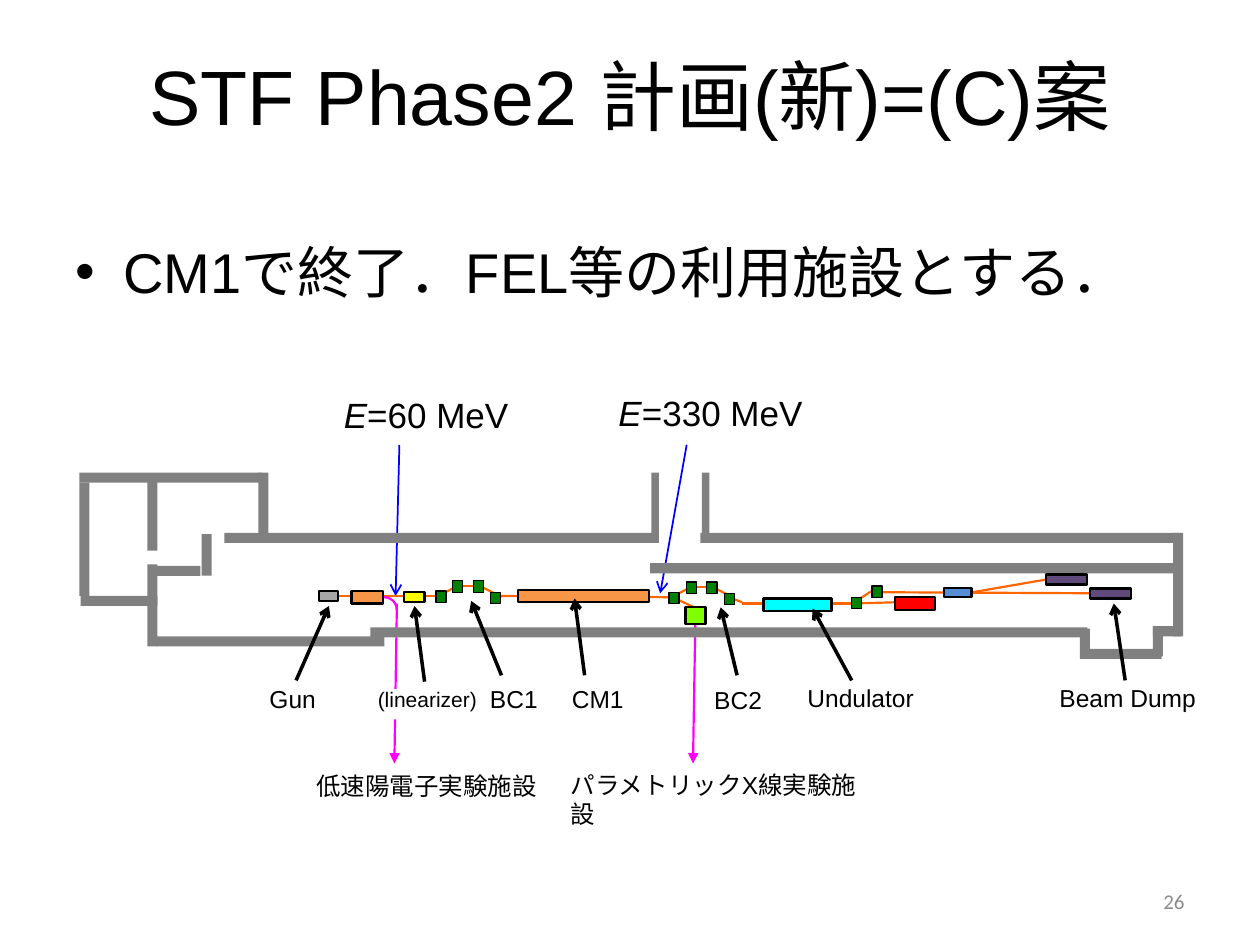
from lxml import etree
from pptx import Presentation
from pptx.dml.color import RGBColor
from pptx.enum.shapes import MSO_CONNECTOR, MSO_SHAPE
from pptx.enum.text import MSO_ANCHOR, PP_ALIGN
from pptx.oxml.ns import qn
from pptx.util import Inches, Pt

HUES = {
    "black": "000000", "white": "FFFFFF", "note": "8C8C8C", "wall": "808080",
    "beam": "FF6600", "branch": "FF00FF", "mark": "0000FF", "magnet": "008000",
    "cavity": "F79646", "gun": "A6A6A6", "dump": "604A7B", "bend": "558ED5",
    "wave": "00FFFF", "linear": "FFFF00", "stop": "FF0000", "target": "80FF00",
}


def hue(name):
    return RGBColor.from_string(HUES[name])


def text(slide, box, words, size=14, font="Arial", color="black", lead="",
         align=PP_ALIGN.LEFT, anchor=MSO_ANCHOR.TOP, fill=None, pitch=None,
         before=None, bullet=False):
    """Add a text box; lead is set in italics ahead of the words."""
    shape = slide.shapes.add_textbox(*map(Inches, box))
    if fill:
        shape.fill.solid()
        shape.fill.fore_color.rgb = hue(fill)
    frame = shape.text_frame
    frame.word_wrap = True
    frame.vertical_anchor = anchor
    para = frame.paragraphs[0]
    para.alignment = align
    if pitch:
        para.line_spacing = Pt(pitch)
    if before:
        para.space_before = Pt(before)
    for part, slant in ((lead, True), (words, False)):
        if part:
            run = para.add_run()
            run.text = part
            run.font.size = Pt(size)
            run.font.name = font
            run.font.italic = slant
            run.font.color.rgb = hue(color)
    if bullet:
        props = para._p.get_or_add_pPr()
        props.set("marL", str(Inches(0.38)))
        props.set("indent", str(-Inches(0.38)))
        etree.SubElement(props, qn("a:buFont")).set("typeface", "Arial")
        etree.SubElement(props, qn("a:buChar")).set("char", "•")


def block(slide, box, fill=None, edge=None, width=1.25, kind=MSO_SHAPE.RECTANGLE):
    shape = slide.shapes.add_shape(kind, *map(Inches, box))
    shape.shadow.inherit = False
    if fill:
        shape.fill.solid()
        shape.fill.fore_color.rgb = hue(fill)
    else:
        shape.fill.background()
    if edge:
        shape.line.color.rgb = hue(edge)
        shape.line.width = Pt(width)
    else:
        shape.line.fill.background()


def line(slide, ends, color="beam", width=1.25, head=None):
    link = slide.shapes.add_connector(MSO_CONNECTOR.STRAIGHT, *map(Inches, ends))
    link.line.color.rgb = hue(color)
    link.line.width = Pt(width)
    if head:
        etree.SubElement(link.line._get_or_add_ln(), qn("a:tailEnd")).set("type", head)
    etree.SubElement(link._element.spPr, qn("a:effectLst"))


def shift(box, x, y, *size):
    return (box[0] + x, box[1] + y, *size)


def span(box, x1, y1, x2, y2):
    return shift(box, x1, y1) + shift(box, x2, y2)


def heading(slide, box):
    x, y, w, h = box
    text(slide, (x, y, w, 0.91), "STF Phase2 計画(新)=(C)案", size=44,
         align=PP_ALIGN.CENTER, anchor=MSO_ANCHOR.MIDDLE)
    text(slide, (x, y + 1.45, w - 0.57, 0.94), "CM1で終了．FEL等の利用施設とする．",
         size=32, pitch=44.4, before=6.4, bullet=True)


def labels(slide, box):
    # Beam energies
    for x, y, words in ((4.31, 0.06, "=330 MeV"), (2.13, 0.07, "=60 MeV")):
        text(slide, shift(box, x, y, 1.99, 0.44), words, size=20, lead="E")
    for ends in ((2.67, 0.53, 2.64, 1.73), (4.95, 0.53, 4.74, 1.71)):
        line(slide, span(box, *ends), "mark", 1, "arrow")
    # Filled label, kept behind its neighbours
    text(slide, shift(box, 2.4, 2.47, 1.02, 0.24), "(linearizer)", size=12,
         fill="white", pitch=9.4)
    # Parts of the beam line
    for x, y, w, words in (
        (1.54, 2.38, 0.64, "Gun"), (3.29, 2.38, 0.65, "BC1"),
        (3.94, 2.38, 0.63, "CM1"), (5.07, 2.39, 0.62, "BC2"),
        (5.81, 2.37, 1.07, "Undulator"), (7.81, 2.37, 1.31, "Beam Dump"),
        (1.91, 3.07, 2.09, "低速陽電子実験施設"),
        (3.93, 3.06, 2.52, "パラメトリックX線実験施設"),
    ):
        text(slide, shift(box, x, y, w, 0.34), words)


def branches(slide, box):
    for ends in ((5.02, 1.86, 5, 3.06), (2.65, 1.79, 2.63, 3.06)):
        line(slide, span(box, *ends), "branch", head="triangle")


def walls(slide, box):
    thick = 0.08
    flat = ((1.28, 1.23, 3.45), (5.06, 1.23, 3.8), (2.44, 1.98, 5.69),
            (0.74, 2.05, 1.81), (0.13, 0.75, 1.45), (0.14, 1.73, 0.61),
            (0.72, 1.49, 0.37), (4.66, 1.47, 4.21), (8.65, 1.97, 0.22),
            (8.15, 2.15, 0.57))
    tall = ((0.13, 0.83, 0.9), (0.67, 1.48, 0.65), (0.67, 0.82, 0.55),
            (1.55, 0.75, 0.55), (1.1, 1.24, 0.33), (8.81, 1.23, 0.82),
            (8.07, 1.99, 0.24), (8.65, 1.97, 0.24))
    for x, y, run in flat:
        block(slide, shift(box, x, y, run, thick), "wall")
    for x, y, run in tall:
        block(slide, shift(box, x, y, thick, run), "wall")
    # Thin walls of the side passage
    for x in (4.67, 5.07):
        block(slide, shift(box, x, 0.75, 0.06, 0.52), "wall")


def beamline(slide, box):
    # Beam path
    for ends in (
        (2.09, 1.73, 3.04, 1.73), (3.15, 1.64, 2.98, 1.73),
        (3.09, 1.65, 3.32, 1.65), (3.31, 1.65, 3.48, 1.74),
        (3.44, 1.73, 4.81, 1.74), (5, 1.65, 4.83, 1.74),
        (4.95, 1.66, 5.17, 1.66), (5.16, 1.66, 5.33, 1.75),
        (5.03, 1.83, 4.86, 1.75), (5.26, 1.73, 5.39, 1.78),
        (5.39, 1.79, 6.28, 1.79), (6.42, 1.69, 6.28, 1.78),
        (6.26, 1.79, 6.61, 1.78), (6.45, 1.7, 8.48, 1.71),
        (7.22, 1.7, 7.8, 1.6),
    ):
        line(slide, span(box, *ends))
    block(slide, shift(box, 2.45, 1.74, 0.2, 0.2), edge="branch", kind=MSO_SHAPE.ARC)
    # Devices
    for x, y, w, h, fill in (
        (2.03, 1.69, 0.15, 0.08, "gun"), (2.29, 1.69, 0.25, 0.1, "cavity"),
        (2.71, 1.7, 0.16, 0.08, "linear"), (3.61, 1.68, 1.04, 0.1, "cavity"),
        (4.94, 1.82, 0.16, 0.13, "target"), (5.56, 1.75, 0.54, 0.1, "wave"),
        (6.6, 1.74, 0.32, 0.1, "stop"), (6.99, 1.67, 0.22, 0.07, "bend"),
        (7.8, 1.56, 0.33, 0.08, "dump"), (8.15, 1.67, 0.33, 0.08, "dump"),
    ):
        block(slide, shift(box, x, y, w, h), fill, "black")
    # Magnets
    for x, y in ((2.96, 1.69), (3.09, 1.61), (3.26, 1.61), (3.39, 1.7),
                 (4.81, 1.7), (4.95, 1.62), (5.11, 1.62), (5.25, 1.71),
                 (6.26, 1.74), (6.42, 1.65)):
        block(slide, shift(box, x, y, 0.08, 0.09), "magnet", "black", 0.75)


def pointers(slide, box):
    for ends in (
        (1.85, 2.4, 2.11, 1.81), (2.87, 2.41, 2.79, 1.81),
        (3.48, 2.36, 3.24, 1.77), (4.14, 2.36, 4.06, 1.75),
        (5.35, 2.36, 5.22, 1.82), (6.26, 2.4, 5.95, 1.83),
        (8.43, 2.4, 8.34, 1.79),
    ):
        line(slide, span(box, *ends), "black", 2, "arrow")


def main():
    deck = Presentation()
    deck.slide_width, deck.slide_height = Inches(10), Inches(7.5)
    slide = deck.slides.add_slide(deck.slide_layouts[6])
    heading(slide, (0.5, 0.3, 9, 2.39))
    plan = (0.5, 3, 9.2, 3.6)
    for draw in (branches, labels, walls, beamline, pointers):
        draw(slide, plan)
    # Page number
    text(slide, (7.17, 6.95, 2.33, 0.4), "26", size=12, font="Calibri",
         color="note", align=PP_ALIGN.RIGHT, anchor=MSO_ANCHOR.MIDDLE)
    deck.save("out.pptx")


if __name__ == "__main__":
    main()
